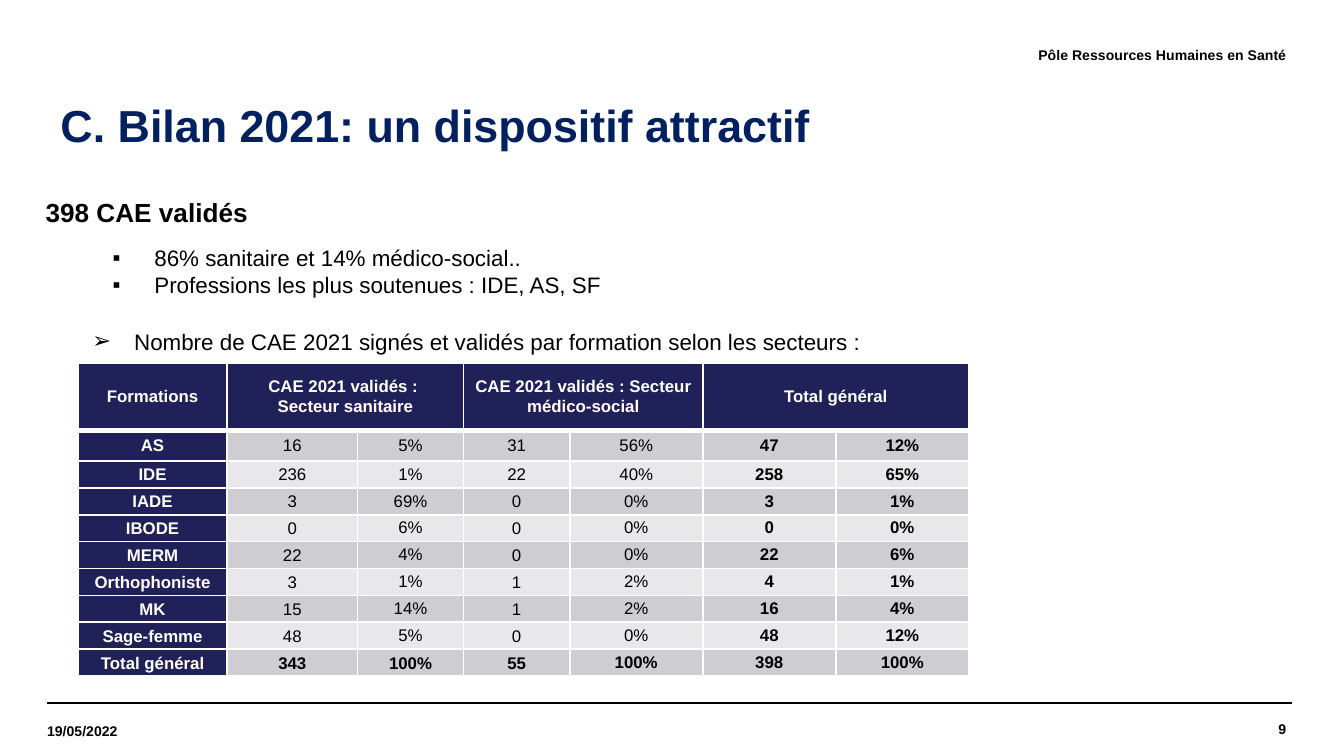
"""Build the slide on the 2021 CAE results."""
from dataclasses import dataclass

import lxml.etree
import pptx
import pptx.dml.color
import pptx.enum.shapes
import pptx.enum.text
import pptx.oxml.ns
import pptx.util

Inches = pptx.util.Inches
Pt = pptx.util.Pt
Align = pptx.enum.text.PP_ALIGN
Anchor = pptx.enum.text.MSO_ANCHOR
qn = pptx.oxml.ns.qn


@dataclass(frozen=True)
class Theme:
    font: str = "Arial"
    text: str = "000000"
    title: str = "002060"
    navy: str = "21215A"
    white: str = "FFFFFF"
    bands: tuple = ("CDCDD2", "E8E8EA")
    title_size: float = 24
    lead_size: float = 14
    body_size: float = 12
    cell_size: float = 9
    small_size: float = 7.5


def rgb(color):
    return pptx.dml.color.RGBColor.from_string(color)


class SlideBuilder:
    def __init__(self, s, theme):
        self.s = s
        self.theme = theme

    def style(self, p, size, color=None, bold=False):
        for r in p.runs:
            r.font.name = self.theme.font
            r.font.size = Pt(size)
            r.font.bold = bold
            r.font.color.rgb = rgb(color or self.theme.text)

    def place(self, sp, box):
        sp.left, sp.top, sp.width, sp.height = map(Inches, box)

    def title(self, text, box):
        sp = self.s.shapes.title
        self.place(sp, box)
        tf = sp.text_frame
        tf.text = text
        tf.vertical_anchor = Anchor.TOP
        tf.auto_size = pptx.enum.text.MSO_AUTO_SIZE.SHAPE_TO_FIT_TEXT
        p = tf.paragraphs[0]
        p.alignment = Align.LEFT
        self.style(p, self.theme.title_size, self.theme.title, True)

    def textbox(self, lines, box):
        tf = self.s.shapes.add_textbox(*map(Inches, box)).text_frame
        tf.word_wrap = True
        tf.text = "\n".join(lines)
        return tf

    def label(self, text, box, align=Align.LEFT):
        tf = self.textbox([text], box)
        tf.margin_left = tf.margin_top = tf.margin_right = tf.margin_bottom = 0
        tf.vertical_anchor = Anchor.MIDDLE
        p = tf.paragraphs[0]
        p.alignment = align
        self.style(p, self.theme.small_size, bold=True)

    def indent(self, p, left, hanging=0, bullet=None):
        pPr = p._p.get_or_add_pPr()
        pPr.set("marL", str(Inches(left)))
        pPr.set("indent", str(Inches(-hanging)))
        if bullet:
            lxml.etree.SubElement(pPr, qn("a:buFont")).set("typeface", self.theme.font)
            lxml.etree.SubElement(pPr, qn("a:buChar")).set("char", bullet)

    def bullets(self, lines, box, bullet, left, lead=None):
        tf = self.textbox(([lead] if lead else []) + lines, box)
        tf.auto_size = pptx.enum.text.MSO_AUTO_SIZE.SHAPE_TO_FIT_TEXT
        items = list(tf.paragraphs)
        if lead:
            p = items.pop(0)
            self.indent(p, 0.1)
            self.style(p, self.theme.lead_size, bold=True)
            items[0].space_before = Pt(9)
        for p in items:
            p.level = 1 if lead else 0
            self.indent(p, left, 0.31, bullet)
            self.style(p, self.theme.body_size)

    def rule(self, left, right, y):
        line = self.s.shapes.add_connector(
            pptx.enum.shapes.MSO_CONNECTOR.STRAIGHT,
            Inches(left), Inches(y), Inches(right), Inches(y))
        line.line.color.rgb = rgb(self.theme.text)
        line.line.width = Pt(0.8)
        lxml.etree.SubElement(line._element.spPr, qn("a:effectLst"))

    def borders(self, cell, top, bottom):
        tcPr = cell._tc.get_or_add_tcPr()
        for side, width in (("L", 1), ("R", 1), ("T", top), ("B", bottom)):
            ln = lxml.etree.SubElement(tcPr, qn(f"a:ln{side}"))
            ln.set("w", str(Pt(width)))
            fill = lxml.etree.SubElement(ln, qn("a:solidFill"))
            lxml.etree.SubElement(fill, qn("a:srgbClr")).set("val", self.theme.white)

    def cell(self, cell, text, fill, color, bold, padded):
        cell.text = text
        cell.vertical_anchor = Anchor.MIDDLE
        cell.margin_left = cell.margin_right = Inches(0.05 if padded else 0)
        cell.margin_top = cell.margin_bottom = 0
        cell.fill.solid()
        cell.fill.fore_color.rgb = rgb(fill)
        for p in cell.text_frame.paragraphs:
            p.alignment = Align.CENTER
            if padded:
                p.line_spacing = 1.07
            self.style(p, self.theme.cell_size, color, bold)

    def table(self, rows, box, widths, heights):
        t = self.theme
        table = self.s.shapes.add_table(
            len(rows), len(widths), *map(Inches, box)).table
        for column, width in zip(table.columns, widths):
            column.width = Inches(width)
        for row, height in zip(table.rows, heights):
            row.height = Inches(height)
        last = len(rows) - 1
        for i, row in enumerate(rows):
            for j, text in enumerate(row):
                cell = table.cell(i, j)
                self.borders(cell, 3 if i == 1 else 1, 3 if i == 0 else 1)
                head = i == 0 or j == 0
                self.cell(
                    cell, text,
                    fill=t.navy if head else t.bands[(i - 1) % 2],
                    color=t.white if head else t.text,
                    bold=head or j >= 5 or i == last,
                    padded=head or j in (1, 3) or (i == last and j == 2))
        for j in (1, 3, 5):
            table.cell(0, j).merge(table.cell(0, j + 1))


ROWS = [
    ("Formations", "CAE 2021 validés : \nSecteur sanitaire", "",
     "CAE 2021 validés : Secteur médico-social", "", "Total général", ""),
    ("AS", "16", "5%", "31", "56%", "47", "12%"),
    ("IDE", "236", "1%", "22", "40%", "258", "65%"),
    ("IADE", "3", "69%", "0", "0%", "3", "1%"),
    ("IBODE", "0", "6%", "0", "0%", "0", "0%"),
    ("MERM", "22", "4%", "0", "0%", "22", "6%"),
    ("Orthophoniste", "3", "1%", "1", "2%", "4", "1%"),
    ("MK", "15", "14%", "1", "2%", "16", "4%"),
    ("Sage-femme", "48", "5%", "0", "0%", "48", "12%"),
    ("Total général", "343", "100%", "55", "100%", "398", "100%"),
]


def main():
    prs = pptx.Presentation()
    prs.slide_width = Inches(10)
    prs.slide_height = prs.slide_width * 9 // 16
    b = SlideBuilder(prs.slides.add_slide(prs.slide_layouts[5]), Theme())
    for left in (0.35, 0.39):
        b.rule(left, left + 9.22, 5.23)
    b.label("9", (8.09, 5.23, 1.48, 0.39), Align.RIGHT)
    b.label("19/05/2022", (0.35, 5.25, 1.28, 0.38))
    b.label("Pôle Ressources Humaines en Santé", (3.14, 0.21, 6.43, 0.39), Align.RIGHT)
    b.title("C. Bilan 2021: un dispositif attractif", (0.35, 0.68, 8.98, 0.5))
    b.bullets(["86% sanitaire et 14% médico-social..",
               "Professions les plus soutenues : IDE, AS, SF"],
              (0.14, 1.41, 9.65, 0.88), "▪", 0.91, lead="398 CAE validés")
    b.bullets(["Nombre de CAE 2021 signés et validés par formation selon les secteurs :"],
              (0.59, 2.39, 8.74, 0.3), "➢", 0.31)
    b.table(ROWS, (0.58, 2.7, 6.61, 2.31),
            [1.11, 0.97, 0.79, 0.79] + [0.99] * 3, [0.5, 0.23] + [0.2] * 8)
    prs.save("out.pptx")


if __name__ == "__main__":
    main()
